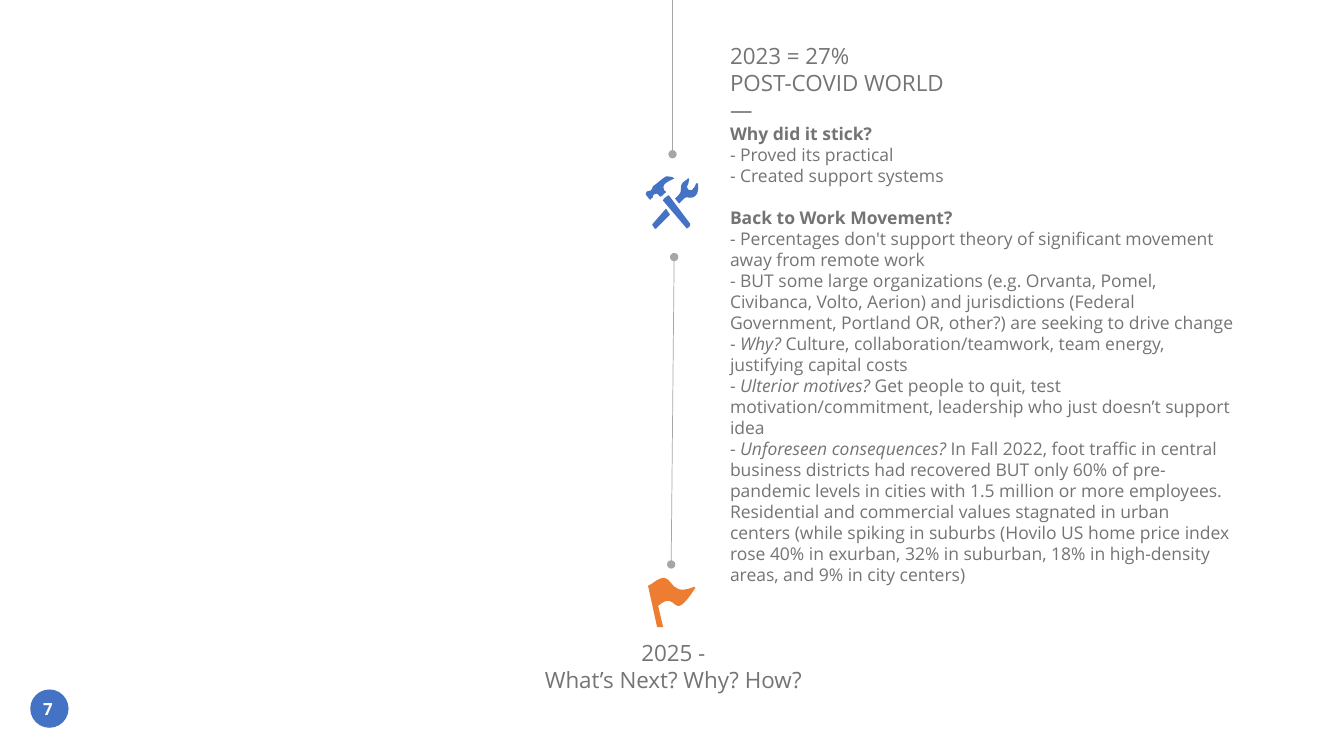
import pptx
import pptx.dml.color
import pptx.enum.shapes
import pptx.enum.text
import pptx.util
from lxml import etree
from pptx.oxml.ns import qn

WIDTH, HEIGHT = pptx.util.Inches(13.33), pptx.util.Inches(7.5)
FONT = "Open Sans"
BLUE, ORANGE, GREY, LINE_GREY, WHITE = "4472C4", "ED7D31", "737572", "A6A6A6", "FFFFFF"
HEADING = {"size": pptx.util.Pt(16)}
BODY = {"size": pptx.util.Pt(12.5)}
BOLD = {**BODY, "bold": True}
ITALIC = {**BODY, "italic": True}
NUMBER = {"size": pptx.util.Pt(12), "bold": True}
CENTRE = {"alignment": pptx.enum.text.PP_ALIGN.CENTER}
GAP = {"space_before": pptx.util.Pt(15)}

# Outlines in hundredths of an inch: a pair is a corner, six numbers are a curve.
HAMMER_HEAD = [
    (8, 18), (10, 16, 12, 17, 14, 20), (15, 20), (16, 20, 19, 16, 20, 16), (20, 15),
    (19, 15, 18, 14, 18, 13), (14, 6, 31, 2, 28, 2), (27, 0, 21, 0, 20, 0),
    (17, 2, 13, 5, 11, 7), (8, 9, 7, 10, 7, 10), (6, 11, 7, 13, 5, 14),
    (3, 15, 2, 14, 1, 15), (1, 16, 0, 16, 0, 17), (0, 18), (3, 22),
    (3, 23, 4, 23, 5, 23), (5, 22, 6, 21, 7, 21), (7, 21, 7, 18, 8, 18)]
HAMMER_HANDLE = [
    (23, 19), (22, 19), (18, 22), (17, 23, 17, 23, 17, 24), (40, 51),
    (40, 52, 41, 52, 42, 51), (44, 49), (44, 48, 44, 47, 44, 47)]
WRENCH_HEAD = [
    (52, 8), (51, 6, 51, 7, 50, 7), (50, 8, 48, 10, 48, 11), (47, 13, 45, 15, 42, 13),
    (40, 10, 41, 9, 42, 8), (42, 7, 43, 4, 43, 3), (44, 3, 43, 2, 42, 2),
    (42, 3, 36, 5, 35, 9), (34, 12, 36, 15, 33, 18), (29, 22), (33, 27), (38, 22),
    (39, 21, 41, 20, 42, 21), (47, 22, 49, 20, 51, 17), (52, 14, 52, 9, 52, 8)]
WRENCH_HANDLE = [
    (7, 47), (6, 48, 6, 49, 7, 49), (9, 52), (10, 52, 11, 52, 11, 51), (24, 38), (20, 32)]
FLAG = [
    (46, 22), (16, 35, 28, 0, 4, 19), (0, 21), (9, 62), (15, 62), (10, 41),
    (31, 23, 22, 62, 47, 23), (47, 23, 47, 22, 46, 22)]

STORY = [
    ([("2023 = 27%", HEADING)], {}),
    ([("POST-COVID WORLD", HEADING)], {}),
    ([("—", HEADING)], {}),
    ([("Why did it stick?", BOLD)], {}),
    ([("- Proved its practical", BODY)], {}),
    ([("- Created support systems", BODY)], {}),
    ([("Back to Work Movement?", BOLD)], GAP),
    ([("- Percentages don't support theory of significant movement away from remote work",
       BODY)], {}),
    ([("- BUT some large organizations (e.g. Orvanta, Pomel, Civibanca, Volto, Aerion) and "
       "jurisdictions (Federal Government, Portland OR, other?) are seeking to drive change",
       BODY)], {}),
    ([("- ", BODY), ("Why?", ITALIC),
      (" Culture, collaboration/teamwork, team energy, justifying capital costs", BODY)], {}),
    ([("- ", BODY), ("Ulterior motives?", ITALIC),
      (" Get people to quit, test motivation/commitment, leadership who just doesn’t "
       "support idea", BODY)], {}),
    ([("- ", BODY), ("Unforeseen consequences?", ITALIC),
      (" In Fall 2022, foot traffic in central business districts had recovered BUT only 60% "
       "of pre-pandemic levels in cities with 1.5 million or more employees. Residential and "
       "commercial values stagnated in urban centers (while spiking in suburbs (Hovilo US "
       "home price index rose 40% in exurban, 32% in suburban, 18% in high-density areas, "
       "and 9% in city centers)", BODY)], {}),
]
NEXT_STEP = [([(text, HEADING)], CENTRE) for text in ("2025 -", "What’s Next? Why? How?")]
PAGE_NUMBER = [([("7", NUMBER)], CENTRE)]


def across(percent):
    return round(WIDTH * percent / 100)


def down(percent):
    return round(HEIGHT * percent / 100)


def area(left, top, width, height):
    return across(left), down(top), across(width), down(height)


def colour(value):
    return pptx.dml.color.RGBColor.from_string(value)


def apply(target, values):
    for name, value in values.items():
        setattr(target, name, value)


def paint(shape, fill):
    shape.shadow.inherit = False
    shape.fill.solid()
    shape.fill.fore_color.rgb = colour(fill)
    shape.line.fill.background()


def add_text(page, place, paragraphs, ink=GREY, wrap=True):
    box = page.shapes.add_textbox(*area(*place))
    frame = box.text_frame
    frame.word_wrap = wrap
    for index, (spans, layout) in enumerate(paragraphs):
        para = frame.add_paragraph() if index else frame.paragraphs[0]
        apply(para, layout)
        for text, style in spans:
            span = para.add_run()
            span.text = text
            apply(span.font, {"name": FONT, **style})
            span.font.color.rgb = colour(ink)


def add_disc(page, place, fill):
    paint(page.shapes.add_shape(pptx.enum.shapes.MSO_SHAPE.OVAL, *area(*place)), fill)


def add_timeline(page, start, end, dots):
    """Draw a thin line with round dots at the named ends (headEnd, tailEnd)."""
    line = page.shapes.add_connector(
        pptx.enum.shapes.MSO_CONNECTOR.STRAIGHT,
        across(start[0]), down(start[1]), across(end[0]), down(end[1]))
    line.line.width = pptx.util.Pt(0.5)
    line.line.color.rgb = colour(LINE_GREY)
    for dot in dots:
        etree.SubElement(line.line._get_or_add_ln(), qn("a:" + dot), type="oval")
    etree.SubElement(line._element.spPr, qn("a:effectLst"))


def pairs(part):
    """Split a corner or a curve into its points."""
    lengths = [pptx.util.Inches(value / 100) for value in part]
    return list(zip(lengths[::2], lengths[1::2]))


def bend(shape, parts):
    """Join the three straight steps of each curve into one cubic segment."""
    steps = iter(list(shape._element.iter(qn("a:lnTo"))))
    for part in parts:
        first = next(steps)
        if len(part) == 6:
            curve = etree.Element(qn("a:cubicBezTo"))
            first.addprevious(curve)
            for step in (first, next(steps), next(steps)):
                curve.append(step[0])
                step.getparent().remove(step)


def add_icon(page, left, top, outlines, fill):
    builder = page.shapes.build_freeform(*pairs(outlines[0][0])[0])
    for index, (start, *parts) in enumerate(outlines):
        if index:
            builder.move_to(*pairs(start)[0])
        points = [point for part in parts for point in pairs(part)]
        builder.add_line_segments(points, close=True)
    shape = builder.convert_to_shape(across(left), down(top))
    bend(shape, [part for outline in outlines for part in outline[1:]])
    paint(shape, fill)


def main():
    deck = pptx.Presentation()
    apply(deck, {"slide_width": WIDTH, "slide_height": HEIGHT})
    page = deck.slides.add_slide(deck.slide_layouts.get_by_name("Blank"))
    add_disc(page, (2.25, 91.2, 2.85, 5.07), BLUE)
    add_text(page, (1.95, 91.73, 3.23, 4), PAGE_NUMBER, WHITE, wrap=False)
    add_timeline(page, (50.16, 34), (49.94, 74.67), ("headEnd", "tailEnd"))
    add_timeline(page, (50.04, 20.4), (50.04, 0), ("headEnd",))
    tools = [HAMMER_HEAD, HAMMER_HANDLE, WRENCH_HEAD, WRENCH_HANDLE]
    add_icon(page, 48.05, 23.33, tools, BLUE)
    add_text(page, (53.58, 4.93, 38.97, 73.87), STORY)
    add_icon(page, 48.22, 74.67, [FLAG], ORANGE)
    add_text(page, (37.88, 83.87, 24.46, 8.53), NEXT_STEP)
    deck.save("out.pptx")


if __name__ == "__main__":
    main()
